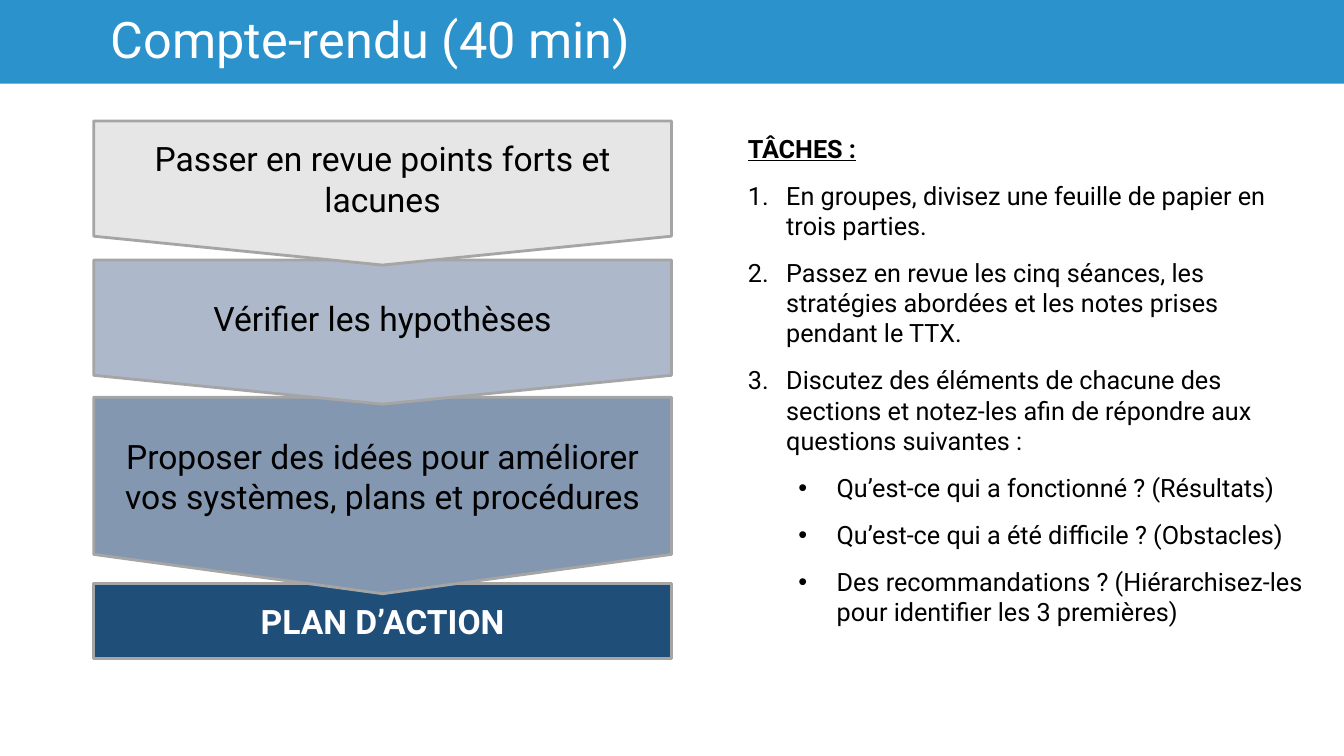
from lxml.etree import SubElement
from pptx import Presentation
from pptx.dml.color import RGBColor
from pptx.enum.shapes import MSO_SHAPE
from pptx.enum.text import MSO_ANCHOR, PP_ALIGN
from pptx.oxml.ns import qn
from pptx.util import Inches, Pt

COLORS = {
    "banner": "2B92CB",
    "review": "E7E6E6",
    "verify": "ADB9CA",
    "propose": "8497B0",
    "plan": "1F4E79",
    "border": "A5A5A5",
    "dark": "000000",
    "light": "FFFFFF",
}
STEP_LEFT, STEP_WIDTH = 0.93, 5.73
STEPS = [
    (MSO_SHAPE.RECTANGLE, 5.79, 0.74, "plan", "PLAN D’ACTION", {"color": "light", "bold": True}),
    (MSO_SHAPE.FLOWCHART_OFFPAGE_CONNECTOR, 3.94, 1.95, "propose",
     "Proposer des idées pour améliorer vos systèmes, plans et procédures", {}),
    (MSO_SHAPE.FLOWCHART_OFFPAGE_CONNECTOR, 2.58, 1.43, "verify", "Vérifier les hypothèses", {}),
    (MSO_SHAPE.FLOWCHART_OFFPAGE_CONNECTOR, 1.2, 1.43, "review",
     "Passer en revue points forts et lacunes", {}),
]
TASKS = [
    "En groupes, divisez une feuille de papier en trois parties.",
    "Passez en revue les cinq séances, les stratégies abordées et les notes prises pendant le TTX.",
    "Discutez des éléments de chacune des sections et notez-les afin de répondre aux questions suivantes :",
]
QUESTIONS = [
    "Qu’est-ce qui a fonctionné ? (Résultats)",
    "Qu’est-ce qui a été difficile ? (Obstacles)",
    "Des recommandations ? (Hiérarchisez-les pour identifier les 3 premières)",
]


class SlideBuilder:
    """Hold the text style and the current page, and add elements to it."""

    def __init__(self, page, font="Roboto"):
        self.page = page
        self.font = font

    def add_text(self, para, text, size, color="dark", layout=None, **marks):
        span = para.add_run()
        span.text = text
        span.font.color.rgb = RGBColor.from_string(COLORS[color])
        for name, value in {"name": self.font, "size": Pt(size), **marks}.items():
            setattr(span.font, name, value)
        for name, value in (layout or {}).items():
            setattr(para, name, value)

    def block(self, kind, left, top, width, height, fill, border=None):
        box = self.page.shapes.add_shape(
            kind, Inches(left), Inches(top), Inches(width), Inches(height))
        box.shadow.inherit = False
        box.fill.solid()
        box.fill.fore_color.rgb = RGBColor.from_string(COLORS[fill])
        if border:
            box.line.color.rgb = RGBColor.from_string(COLORS[border])
            box.line.width = Pt(2)
        else:
            box.line.fill.background()
        frame = box.text_frame
        for name, value in {"word_wrap": True, "vertical_anchor": MSO_ANCHOR.MIDDLE}.items():
            setattr(frame, name, value)
        return frame

    def title(self, text):
        frame = self.block(MSO_SHAPE.RECTANGLE, 0, 0, 13.33, 0.83, "banner")
        margins = {"margin_left": 1.1, "margin_right": 0.1, "margin_top": 0.1, "margin_bottom": 0.1}
        for name, value in margins.items():
            setattr(frame, name, Inches(value))
        layout = {"alignment": PP_ALIGN.LEFT, "line_spacing": 0.9}
        self.add_text(frame.paragraphs[0], text, 36, "light", layout)

    def step(self, kind, top, height, fill, text, marks):
        frame = self.block(kind, STEP_LEFT, top, STEP_WIDTH, height, fill, "border")
        self.add_text(frame.paragraphs[0], text, 24, layout={"alignment": PP_ALIGN.CENTER}, **marks)

    def item(self, frame, text, level, indent, bullet, **bullet_values):
        para = frame.add_paragraph()
        self.add_text(para, text, 18, layout={"level": level, "space_after": Pt(12)})
        properties = para._p.get_or_add_pPr()
        for name, value in {"marL": indent, "indent": -0.38}.items():
            properties.set(name, str(Inches(value)))
        if bullet == "a:buChar":
            SubElement(properties, qn("a:buFont"), typeface="Arial")
        SubElement(properties, qn(bullet), **bullet_values)

    def task_list(self, heading, tasks, questions):
        box = self.page.shapes.add_textbox(Inches(7.32), Inches(1.27), Inches(5.73), Inches(5.34))
        frame = box.text_frame
        frame.word_wrap = True
        self.add_text(frame.paragraphs[0], heading, 18, layout={"space_after": Pt(12)},
                      bold=True, underline=True)
        for task in tasks:
            self.item(frame, task, 0, 0.38, "a:buAutoNum", type="arabicPeriod")
        for question in questions:
            self.item(frame, question, 1, 0.88, "a:buChar", char="•")


def main():
    deck = Presentation()
    deck.slide_width, deck.slide_height = Inches(13.33), Inches(7.5)
    builder = SlideBuilder(deck.slides.add_slide(deck.slide_layouts[6]))
    for step in STEPS:
        builder.step(*step)
    builder.title("Compte-rendu (40 min)")
    builder.task_list("TÂCHES :", TASKS, QUESTIONS)
    deck.save("out.pptx")


if __name__ == "__main__":
    main()
